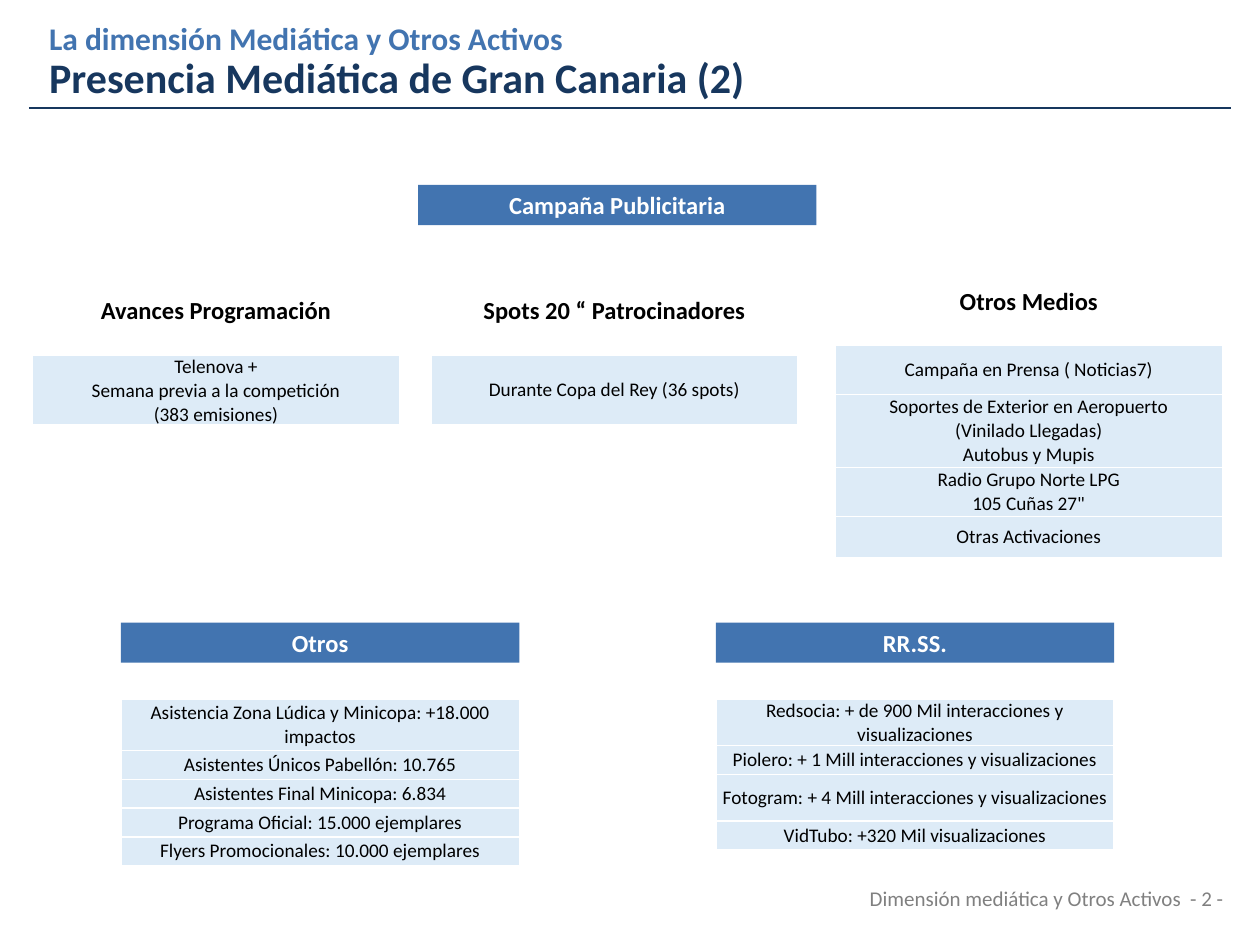
import pptx
import pptx.util
import pptx.dml.color
import pptx.enum.shapes
import pptx.enum.text
import pptx.oxml.ns
import lxml.etree

Cm = pptx.util.Cm
Pt = pptx.util.Pt
RGB = pptx.dml.color.RGBColor
Align = pptx.enum.text.PP_ALIGN
Anchor = pptx.enum.text.MSO_ANCHOR

BLUE = RGB(0x42, 0x74, 0xB0)
NAVY = RGB(0x17, 0x37, 0x5E)
PALE = RGB(0xDD, 0xEB, 0xF7)
GRAY = RGB(0x80, 0x80, 0x80)
BLACK = RGB(0, 0, 0)
WHITE = RGB(255, 255, 255)

FONT = "Calibri"
GAP = 0.58    # blank row, and rows of one line
BAR = 8.03    # width of a heading bar and the table below it
SPLIT = 0.71  # share of the first column

# Left, top, width, head, row heights (head and blank row first), entries
MEDIA = [
    (0.66, 5.84, 7.39, "Avances Programación", [0.74, GAP, 1.4],
     ["Telenova +\nSemana previa a la competición\n(383 emisiones)"]),
    (8.69, 5.84, 7.39, "Spots 20 “ Patrocinadores", [0.74, GAP, 1.4],
     ["Durante Copa del Rey (36 spots)"]),
    (16.84, 5.69, 7.8, "Otros Medios", [0.71, 0.56, 0.99, 1.47, 0.99, 0.84],
     ["Campaña en Prensa ( Noticias7)",
      "Soportes de Exterior en Aeropuerto\n(Vinilado Llegadas)\nAutobus y Mupis",
      "Radio Grupo Norte LPG\n105 Cuñas 27\"",
      "Otras Activaciones"]),
]

# Left, head, row heights (blank row first), entries
IMPACT = [
    (2.44, "Otros", [GAP, 1.04, GAP, GAP, GAP, GAP],
     ["Asistencia Zona Lúdica y Minicopa: +18.000 impactos",
      "Asistentes Únicos Pabellón: 10.765",
      "Asistentes Final Minicopa: 6.834",
      "Programa Oficial: 15.000 ejemplares",
      "Flyers Promocionales: 10.000 ejemplares"]),
    (14.43, "RR.SS.", [GAP, 0.94, GAP, 0.94, GAP],
     ["Redsocia: + de 900 Mil interacciones y visualizaciones",
      "Piolero: + 1 Mill interacciones y visualizaciones",
      "Fotogram: + 4 Mill interacciones y visualizaciones",
      "VidTubo: +320 Mil visualizaciones"]),
]


def style(par, size, color, bold=False, align=Align.CENTER):
    par.alignment = align
    par.font.name = FONT
    par.font.size = Pt(size)
    par.font.bold = bold
    par.font.color.rgb = color


def add_bar(slide, left, top, text):
    bar = slide.shapes.add_shape(
        pptx.enum.shapes.MSO_SHAPE.RECTANGLE,
        Cm(left), Cm(top), Cm(BAR), Cm(0.81))
    bar.shadow.inherit = False
    bar.fill.solid()
    bar.fill.fore_color.rgb = BLUE
    bar.line.fill.background()
    frame = bar.text_frame
    frame.vertical_anchor = Anchor.MIDDLE
    frame.text = text
    style(frame.paragraphs[0], 14, WHITE, True)


def fill_row(table, row, text, head=False):
    cell = table.cell(row, 0)
    cell.merge(table.cell(row, 1))
    cell.text = text
    cell.vertical_anchor = Anchor.BOTTOM if head else Anchor.MIDDLE
    for par in cell.text_frame.paragraphs:
        style(par, 14 if head else 11, BLACK, head)
    if not head:
        cell.fill.solid()
        cell.fill.fore_color.rgb = PALE


def add_list(slide, left, top, width, rows, items, head=None):
    table = slide.shapes.add_table(
        len(rows), 2, Cm(left), Cm(top), Cm(width), Cm(sum(rows))).table
    table.first_row = False
    table.horz_banding = False
    for col, share in zip(table.columns, (SPLIT, 1 - SPLIT)):
        col.width = Cm(width * share)
    for row, high in zip(table.rows, rows):
        row.height = Cm(high)
        for cell in row.cells:
            cell.margin_left = cell.margin_right = 0
            cell.margin_top = cell.margin_bottom = 0
            cell.fill.background()
            style(cell.text_frame.paragraphs[0], 11, BLACK)
    if head:
        fill_row(table, 0, head, True)
    first = len(rows) - len(items)
    for row, text in enumerate(items, first):
        fill_row(table, row, text)


def add_title(slide, small, large):
    box = slide.shapes.add_textbox(Cm(0.99), Cm(0.46), Cm(23.01), Cm(1.63))
    frame = box.text_frame
    frame.word_wrap = True
    frame.vertical_anchor = Anchor.MIDDLE
    frame.margin_left = frame.margin_right = 0
    frame.margin_top = frame.margin_bottom = 0
    par = frame.paragraphs[0]
    par.line_spacing = 0.9
    par.font.name = FONT
    par.font.bold = True
    for text, size, color in ((small, 18, BLUE), (large, 24, NAVY)):
        if par.runs:
            par.add_line_break()
        run = par.add_run()
        run.text = text
        run.font.size = Pt(size)
        run.font.color.rgb = color


def add_rule(slide, left, right, top):
    rule = slide.shapes.add_connector(
        pptx.enum.shapes.MSO_CONNECTOR.STRAIGHT,
        Cm(left), Cm(top), Cm(right), Cm(top))
    rule.line.color.rgb = NAVY
    rule.line.width = Pt(0.75)
    lxml.etree.SubElement(
        rule._element.spPr, pptx.oxml.ns.qn("a:effectLst"))


def add_foot(slide, text):
    box = slide.shapes.add_textbox(Cm(16.51), Cm(17.73), Cm(8.41), Cm(0.76))
    box.text_frame.word_wrap = True
    box.text_frame.text = text
    style(box.text_frame.paragraphs[0], 12, GRAY, align=Align.RIGHT)


def main():
    deck = pptx.Presentation()
    deck.slide_width = Cm(25.4)
    deck.slide_height = Cm(19.05)
    slide = deck.slides.add_slide(deck.slide_layouts[6])

    # Title and rule
    add_title(slide, "La dimensión Mediática y Otros Activos",
              "Presencia Mediática de Gran Canaria (2)")
    add_rule(slide, 0.58, 24.82, 2.18)

    # Advertising campaign
    add_bar(slide, 8.43, 3.73, "Campaña Publicitaria")
    for left, top, width, head, rows, items in MEDIA:
        add_list(slide, left, top, width, rows, items, head)

    # Other impacts and social networks
    for left, head, rows, items in IMPACT:
        add_bar(slide, left, 12.55, head)
        add_list(slide, left, 13.51, BAR, rows, items)

    # Footer
    add_foot(slide, "Dimensión mediática y Otros Activos  - 2 -")
    deck.save("out.pptx")


if __name__ == "__main__":
    main()
